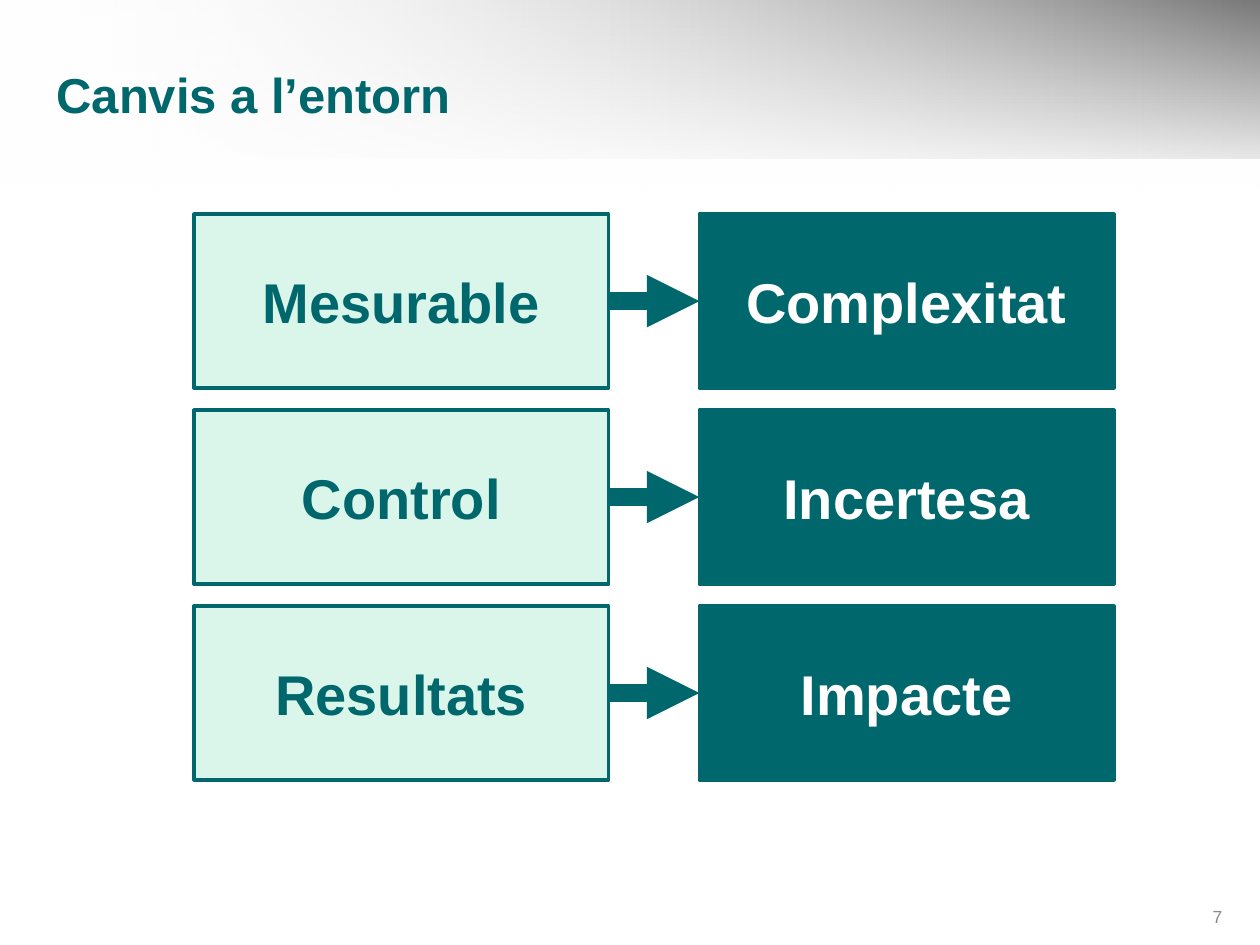
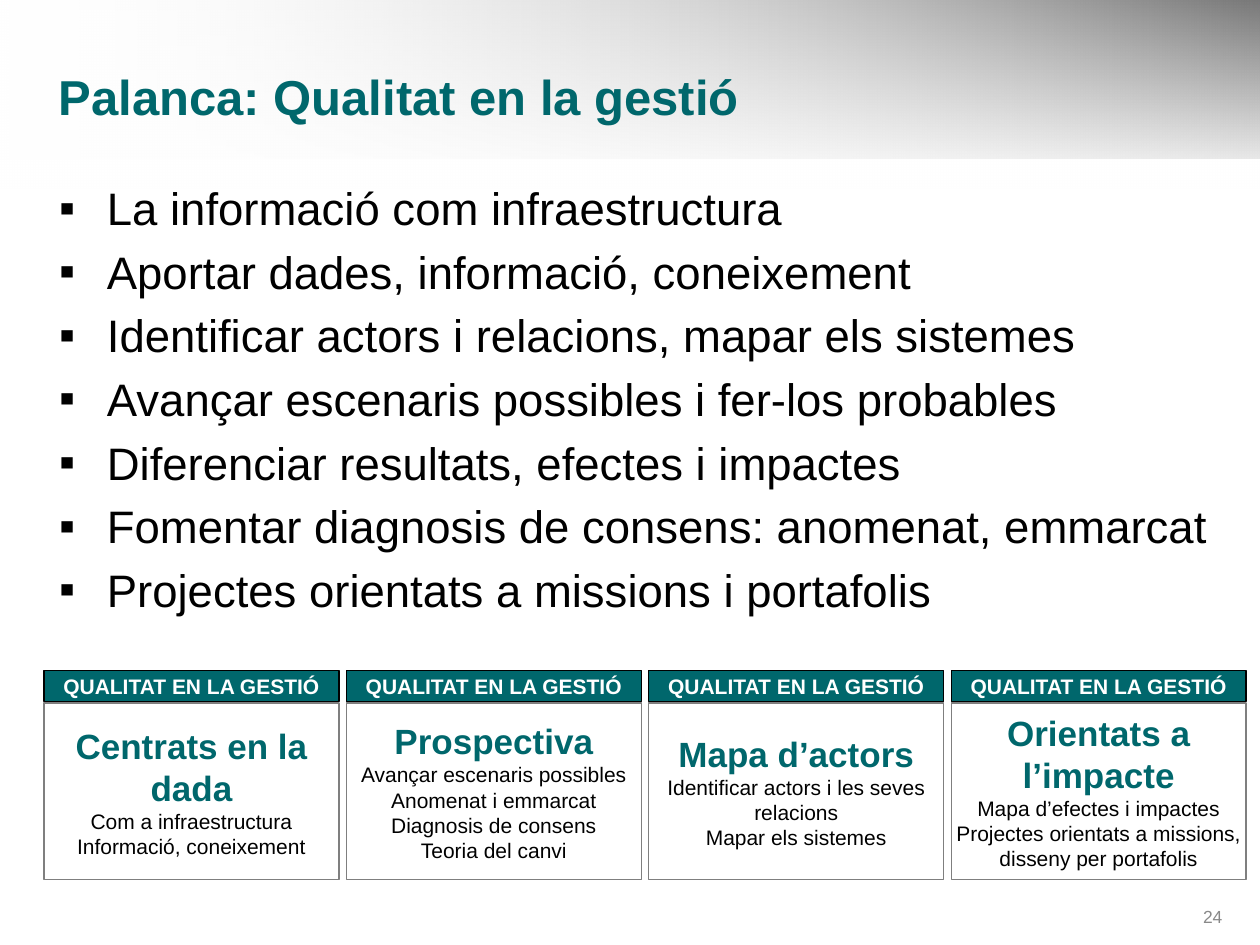
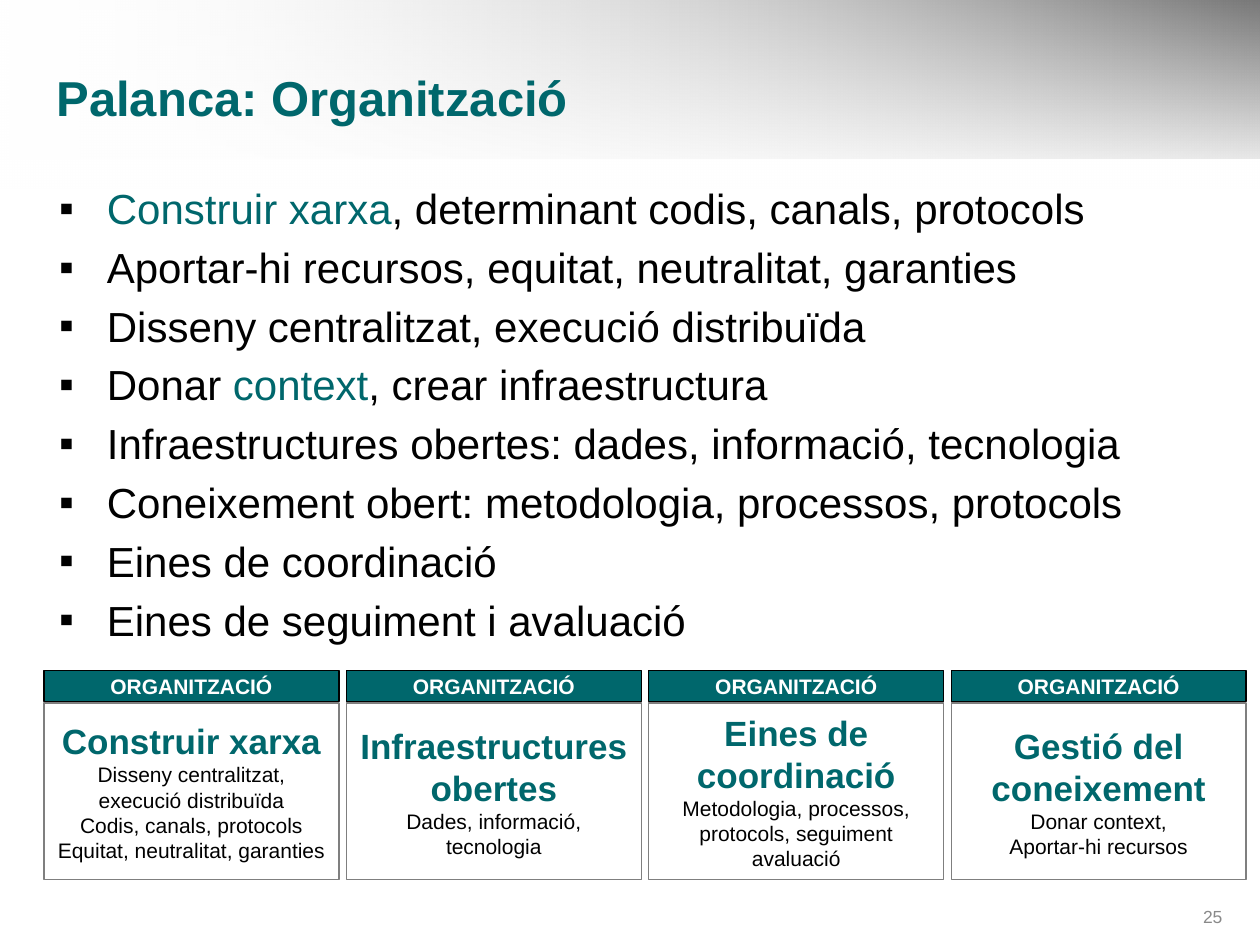
from lxml import etree
from pptx import Presentation
from pptx.dml.color import RGBColor
from pptx.enum.shapes import MSO_CONNECTOR, MSO_SHAPE
from pptx.enum.text import MSO_ANCHOR, PP_ALIGN
from pptx.oxml.ns import qn
from pptx.util import Inches, Pt

RECTANGLE = MSO_SHAPE.RECTANGLE
STRAIGHT = MSO_CONNECTOR.STRAIGHT
TOP, MIDDLE = MSO_ANCHOR.TOP, MSO_ANCHOR.MIDDLE
LEFT, CENTER, RIGHT = PP_ALIGN.LEFT, PP_ALIGN.CENTER, PP_ALIGN.RIGHT

TEAL, MINT, WHITE, BLACK = "00676C", "DAF6EB", "FFFFFF", "000000"
CARD_BORDER, NUMBER_GRAY = "7F7F7F", "898989"
FONT = "Arial"
SLIDE_WIDTH, SLIDE_HEIGHT = 10, 7.5

TITLE = {"size": Pt(28), "color": TEAL, "bold": True}
NUMBER = {"size": Pt(10), "color": NUMBER_GRAY}
CARD_HEADER = {"size": Pt(12), "color": WHITE, "bold": True}
CARD_TITLE = {"size": Pt(20), "color": TEAL, "bold": True}
CARD_DETAIL = {"size": Pt(12), "color": BLACK}

BANDS = [
    (1.26, 0, [(WHITE, 0), (BLACK, 100)]),
    (1.5, 270, [(WHITE, 47), (WHITE, 100)]),
]

BOX_WIDTH, BOX_HEIGHT = 3.29, 1.38
BOX_LEFT, BOX_TOP = 1.54, 1.7
BOX_COLUMN, BOX_ROW = 4.01, 1.555
CHANGES = [("Mesurable", "Complexitat"), ("Control", "Incertesa"), ("Resultats", "Impacte")]

CARD_LEFT, CARD_COLUMN, CARD_WIDTH = 0.35, 2.4, 2.34
HEADER_TOP, HEADER_HEIGHT = 5.32, 0.25
CARD_TOP, CARD_HEIGHT = 5.58, 1.4
INSET, NARROW_INSET = 0.1, 0.04
BULLET_INDENT = 0.38

SLIDES = [
    {
        "number": "7",
        "title": "Canvis a l’entorn",
        "title_frame": (0.35, 0.46, 9.21, 0.62),
        "title_anchor": TOP,
    },
    {
        "number": "24",
        "title": "Palanca: Qualitat en la gestió",
        "title_frame": (0.37, 0.45, 9.2, 0.63),
        "title_anchor": MIDDLE,
        "body_frame": (0.37, 1.38, 9.35, 5.76),
        "body_size": 26,
        "bullets": [
            [("La informació com infraestructura", BLACK)],
            [("Aportar dades, informació, coneixement", BLACK)],
            [("Identificar actors i relacions, mapar els sistemes", BLACK)],
            [("Avançar escenaris possibles i fer-los probables", BLACK)],
            [("Diferenciar resultats, efectes i impactes", BLACK)],
            [("Fomentar diagnosis de consens: anomenat, emmarcat", BLACK)],
            [("Projectes orientats a missions i portafolis", BLACK)],
        ],
        "header": "QUALITAT EN LA GESTIÓ",
        "cards": [
            (INSET, "Centrats en la dada", ["Com a infraestructura", "Informació, coneixement"]),
            (INSET, "Prospectiva", ["Avançar escenaris possibles", "Anomenat i emmarcat",
                                    "Diagnosis de consens", "Teoria del canvi"]),
            (INSET, "Mapa d’actors", ["Identificar actors i les seves relacions",
                                      "Mapar els sistemes"]),
            (NARROW_INSET, "Orientats a l’impacte", [
                "Mapa d’efectes i impactes",
                "Projectes orientats a missions, disseny per portafolis"]),
        ],
    },
    {
        "number": "25",
        "title": "Palanca: Organització",
        "title_frame": (0.35, 0.46, 9.21, 0.62),
        "title_anchor": MIDDLE,
        "body_frame": (0.37, 1.4, 9.21, 5.66),
        "body_size": 24,
        "bullets": [
            [("Construir xarxa", TEAL), (", determinant codis, canals, protocols", BLACK)],
            [("Aportar-hi recursos, equitat, neutralitat, garanties", BLACK)],
            [("Disseny centralitzat, execució distribuïda", BLACK)],
            [("Donar ", BLACK), ("context", TEAL), (", crear infraestructura", BLACK)],
            [("Infraestructures obertes: dades, informació, tecnologia", BLACK)],
            [("Coneixement obert: metodologia, processos, protocols", BLACK)],
            [("Eines de coordinació", BLACK)],
            [("Eines de seguiment i avaluació", BLACK)],
        ],
        "header": "ORGANITZACIÓ",
        "cards": [
            (INSET, "Construir xarxa", ["Disseny centralitzat,", "execució distribuïda",
                                        "Codis, canals, protocols Equitat, neutralitat, garanties"]),
            (INSET, "Infraestructures obertes", ["Dades, informació, tecnologia"]),
            (NARROW_INSET, "Eines de coordinació", [
                "Metodologia, processos, protocols, seguiment avaluació"]),
            (INSET, "Gestió del coneixement", ["Donar context,", "Aportar-hi recursos"]),
        ],
    },
]


def rgb(value):
    return RGBColor.from_string(value)


def add_text(slide, frame, paragraphs, align=LEFT, anchor=TOP, fill=None, line=None,
             line_width=0, inset=INSET):
    frame = [Inches(length) for length in frame]
    if fill:
        shape = slide.shapes.add_shape(RECTANGLE, *frame)
        shape.shadow.inherit = False
        shape.fill.solid()
        shape.fill.fore_color.rgb = rgb(fill)
        shape.line.color.rgb = rgb(line)
        shape.line.width = Pt(line_width)
    else:
        shape = slide.shapes.add_textbox(*frame)
    text_frame = shape.text_frame
    settings = {"word_wrap": True, "vertical_anchor": anchor,
                "margin_left": Inches(inset), "margin_right": Inches(inset),
                "margin_top": Inches(0.05), "margin_bottom": Inches(0.05)}
    for name, value in settings.items():
        setattr(text_frame, name, value)
    for index, runs in enumerate(paragraphs):
        paragraph = text_frame.add_paragraph() if index else text_frame.paragraphs[0]
        paragraph.alignment = align
        for text, style in runs:
            run = paragraph.add_run()
            run.text = text
            for name, value in {"name": FONT, "bold": False, **style}.items():
                if name == "color":
                    run.font.color.rgb = rgb(value)
                else:
                    setattr(run.font, name, value)
    return shape


presentation = Presentation()
presentation.slide_width = Inches(SLIDE_WIDTH)
presentation.slide_height = Inches(SLIDE_HEIGHT)

for content in SLIDES:
    slide = presentation.slides.add_slide(presentation.slide_layouts[6])
    for height, angle, stops in BANDS:
        band = slide.shapes.add_shape(RECTANGLE, 0, 0, Inches(SLIDE_WIDTH), Inches(height))
        band.shadow.inherit = False
        band.line.fill.background()
        band.fill.gradient()
        band.fill.gradient_angle = angle
        for position, (stop, (color, opacity)) in enumerate(zip(band.fill.gradient_stops, stops)):
            stop.position = position
            stop.color.rgb = rgb(color)
        colors = band.element.spPr.iter(qn("a:srgbClr"))
        for element, (color, opacity) in zip(colors, stops):
            etree.SubElement(element, qn("a:alpha"), val=str(opacity * 1000))
    add_text(slide, (9.17, 7.14, 0.63, 0.29), [[(content["number"], NUMBER)]], align=RIGHT)
    add_text(slide, content["title_frame"], [[(content["title"], TITLE)]],
             anchor=content["title_anchor"])

    if "bullets" not in content:
        for row, words in enumerate(CHANGES):
            boxes = []
            for column, (word, fill, color) in enumerate(zip(words, (MINT, TEAL), (TEAL, WHITE))):
                frame = (BOX_LEFT + column * BOX_COLUMN, BOX_TOP + row * BOX_ROW,
                         BOX_WIDTH, BOX_HEIGHT)
                style = {"size": Pt(32), "color": color, "bold": True}
                boxes.append(add_text(slide, frame, [[(word, style)]], CENTER, MIDDLE,
                                      fill, TEAL, 2))
            arrow = slide.shapes.add_connector(STRAIGHT, 0, 0, 0, 0)
            arrow.begin_connect(boxes[0], 3)
            arrow.end_connect(boxes[1], 1)
            arrow.line.color.rgb = rgb(TEAL)
            arrow.line.width = Pt(10)
            etree.SubElement(arrow.line._get_or_add_ln(), qn("a:tailEnd"), type="triangle")
            etree.SubElement(arrow.element.spPr, qn("a:effectLst"))
        continue

    size = content["body_size"]
    paragraphs = [[(text, {"size": Pt(size), "color": color}) for text, color in runs]
                  for runs in content["bullets"]]
    body = add_text(slide, content["body_frame"], paragraphs)
    for index, paragraph in enumerate(body.text_frame.paragraphs):
        paragraph.space_before = Pt(size * 0.2 if index else 0)
        properties = paragraph._p.get_or_add_pPr()
        properties.set("marL", str(Inches(BULLET_INDENT)))
        properties.set("indent", str(-Inches(BULLET_INDENT)))
        bullet_color = etree.SubElement(properties, qn("a:buClr"))
        etree.SubElement(bullet_color, qn("a:srgbClr"), val=BLACK)
        etree.SubElement(properties, qn("a:buFont"), typeface=FONT)
        etree.SubElement(properties, qn("a:buChar"), char="▪")

    for column, (inset, heading, details) in enumerate(content["cards"]):
        left = CARD_LEFT + column * CARD_COLUMN
        paragraphs = [[(heading, CARD_TITLE)]] + [[(detail, CARD_DETAIL)] for detail in details]
        add_text(slide, (left, CARD_TOP, CARD_WIDTH, CARD_HEIGHT), paragraphs,
                 CENTER, MIDDLE, WHITE, CARD_BORDER, inset=inset)
        add_text(slide, (left, HEADER_TOP, CARD_WIDTH, HEADER_HEIGHT),
                 [[(content["header"], CARD_HEADER)]], CENTER, MIDDLE, TEAL, BLACK)

presentation.save("out.pptx")
